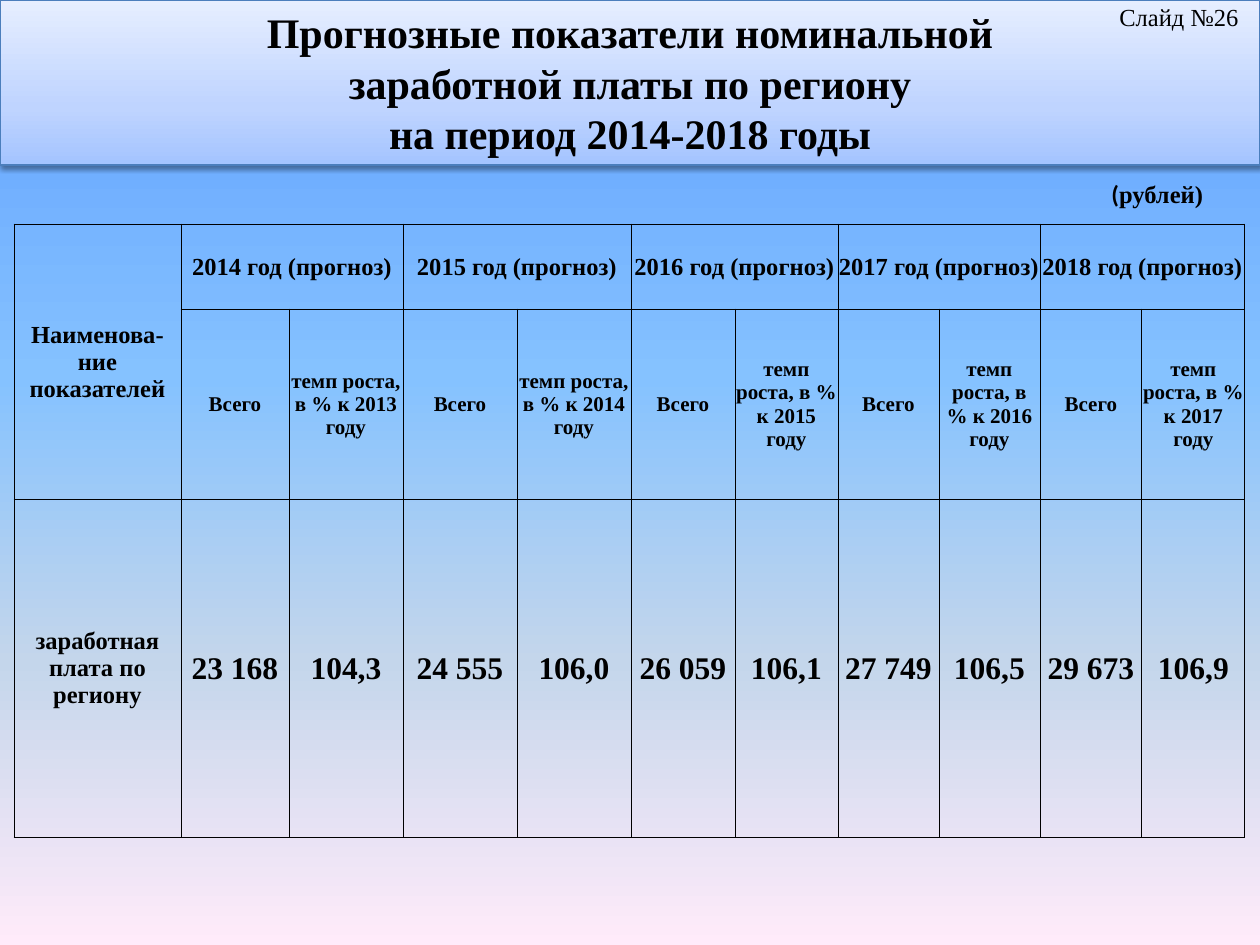
"""Build the slide with the regional nominal wage forecast for 2014-2018."""
from lxml import etree
from pptx import Presentation
from pptx.dml.color import RGBColor
from pptx.enum.text import MSO_ANCHOR, MSO_AUTO_SIZE, PP_ALIGN
from pptx.oxml.ns import qn
from pptx.util import Pt

LEFT, CENTER = PP_ALIGN.LEFT, PP_ALIGN.CENTER
MIDDLE, NO_FIT = MSO_ANCHOR.MIDDLE, MSO_AUTO_SIZE.NONE
TITLE_ONLY = 5
EMU_PER_PX = 914400 / 126
SERIF, SANS = "Times New Roman", "Calibri"

COLORS = {"text": "000000", "border": "000000", "title_line": "4B7EBC", "shadow": "000000"}
BACKGROUND_STOPS = [(0, "5E9EFF"), (40, "85C2FF"), (70, "C4D6EB"), (100, "FFEBFA")]
TITLE_STOPS = [(0, "A4C4FF"), (35, "BFD4FF"), (100, "E6EEFF")]

COL_WIDTHS = [167, 108, 114, 114, 114, 104, 103, 101, 101, 102, 103]
ROW_HEIGHTS = [85, 190, 338]
FORECASTS = [
    (2014, "23 168", "104,3"),
    (2015, "24 555", "106,0"),
    (2016, "26 059", "106,1"),
    (2017, "27 749", "106,5"),
    (2018, "29 673", "106,9"),
]


def px(n):
    """Turn pixels into EMU."""
    return round(n * EMU_PER_PX)


def add_element(parent, tag, **attrs):
    """Append a drawing element with the given attributes."""
    el = etree.SubElement(parent, qn(tag))
    for name, value in attrs.items():
        el.set(name, str(value))
    return el


def write(tf, text, size=14, bold=True, font=SERIF, align=CENTER, append=False):
    """Write one paragraph per line of text, or append a run to the last one."""
    for i, line in enumerate(text.split("\n")):
        p = tf.paragraphs[-1] if append or i == 0 else tf.add_paragraph()
        p.alignment = align
        r = p.add_run()
        r.text = line
        r.font.size, r.font.bold, r.font.name = Pt(size), bold, font
        r.font.color.rgb = RGBColor.from_string(COLORS["text"])


def set_gradient(fill, parent, stops, angle):
    """Give a fill a linear gradient with any number of stops."""
    fill.gradient()
    fill.gradient_angle = angle
    stop_list = next(parent.iter(qn("a:gsLst")))
    for old in list(stop_list):
        stop_list.remove(old)
    for position, color in stops:
        stop = add_element(stop_list, "a:gs", pos=position * 1000)
        add_element(stop, "a:srgbClr", val=color)


def add_shadow(sp):
    """Drop a soft shadow below a shape."""
    effects = add_element(sp._element.spPr, "a:effectLst")
    shadow = add_element(effects, "a:outerShdw", blurRad=40000, dist=20000,
                         dir=5400000, rotWithShape=0)
    color = add_element(shadow, "a:srgbClr", val=COLORS["shadow"])
    add_element(color, "a:alpha", val=38000)


def add_title(slide, text):
    """Format the title placeholder as a gradient banner."""
    sp = slide.shapes.title
    sp.left, sp.top, sp.width, sp.height = px(0), px(0), px(1260), px(165)
    set_gradient(sp.fill, sp._element, TITLE_STOPS, 90)
    sp.line.color.rgb = RGBColor.from_string(COLORS["title_line"])
    sp.line.width = Pt(0.75)
    add_shadow(sp)
    tf = sp.text_frame
    tf.auto_size, tf.vertical_anchor = NO_FIT, MIDDLE
    write(tf, text, size=24)


def add_label(slide, x, y, w, h):
    """Add an empty text box and return its text frame."""
    tf = slide.shapes.add_textbox(px(x), px(y), px(w), px(h)).text_frame
    tf.word_wrap = True
    return tf


def fill_cell(cell, text, size=14):
    """Write a centred, unfilled table cell."""
    cell.vertical_anchor = MIDDLE
    cell.margin_left = cell.margin_right = cell.margin_top = px(1)
    cell.margin_bottom = 0
    write(cell.text_frame, text, size=size)


def set_borders(cell):
    """Draw thin borders on all sides of a cell without a fill."""
    tc_pr = cell._tc.get_or_add_tcPr()
    for side in ("a:lnL", "a:lnR", "a:lnT", "a:lnB"):
        ln = add_element(tc_pr, side, w=Pt(0.5))
        add_element(add_element(ln, "a:solidFill"), "a:srgbClr", val=COLORS["border"])
    cell.fill.background()


def add_forecast_table(slide):
    """Add the table with a pair of columns for each forecast year."""
    table = slide.shapes.add_table(
        len(ROW_HEIGHTS), len(COL_WIDTHS), px(14), px(224),
        px(sum(COL_WIDTHS)), px(sum(ROW_HEIGHTS))).table
    table.first_row = table.horz_banding = False
    for col, width in zip(table.columns, COL_WIDTHS):
        col.width = px(width)
    for row, height in zip(table.rows, ROW_HEIGHTS):
        row.height = px(height)
    for cell in table.iter_cells():
        set_borders(cell)

    table.cell(0, 0).merge(table.cell(1, 0))
    fill_cell(table.cell(0, 0), "Наименова-\nние показателей")
    fill_cell(table.cell(2, 0), "заработная плата по региону")
    for i, (year, total, growth) in enumerate(FORECASTS):
        c = 1 + 2 * i
        table.cell(0, c).merge(table.cell(0, c + 1))
        fill_cell(table.cell(0, c), f"{year} год (прогноз)")
        fill_cell(table.cell(1, c), "Всего", size=12)
        fill_cell(table.cell(1, c + 1), f"темп роста, в % к {year - 1} году", size=12)
        fill_cell(table.cell(2, c), total, size=18)
        fill_cell(table.cell(2, c + 1), growth, size=18)


def main():
    """Build and save the slide."""
    prs = Presentation()
    prs.slide_width, prs.slide_height = px(1260), px(945)
    slide = prs.slides.add_slide(prs.slide_layouts[TITLE_ONLY])
    set_gradient(slide.background.fill, slide._element, BACKGROUND_STOPS, 270)
    add_title(slide, "Прогнозные показатели номинальной\n"
                     "заработной платы по региону\nна период 2014-2018 годы")
    add_forecast_table(slide)
    unit = add_label(slide, 1099, 173, 118, 43)
    write(unit, "(", font=SANS, align=LEFT)
    write(unit, "рублей)", align=LEFT, append=True)
    write(add_label(slide, 1107, -4, 153, 43), "Слайд №26", bold=False, align=LEFT)
    prs.save("out.pptx")


if __name__ == "__main__":
    main()
